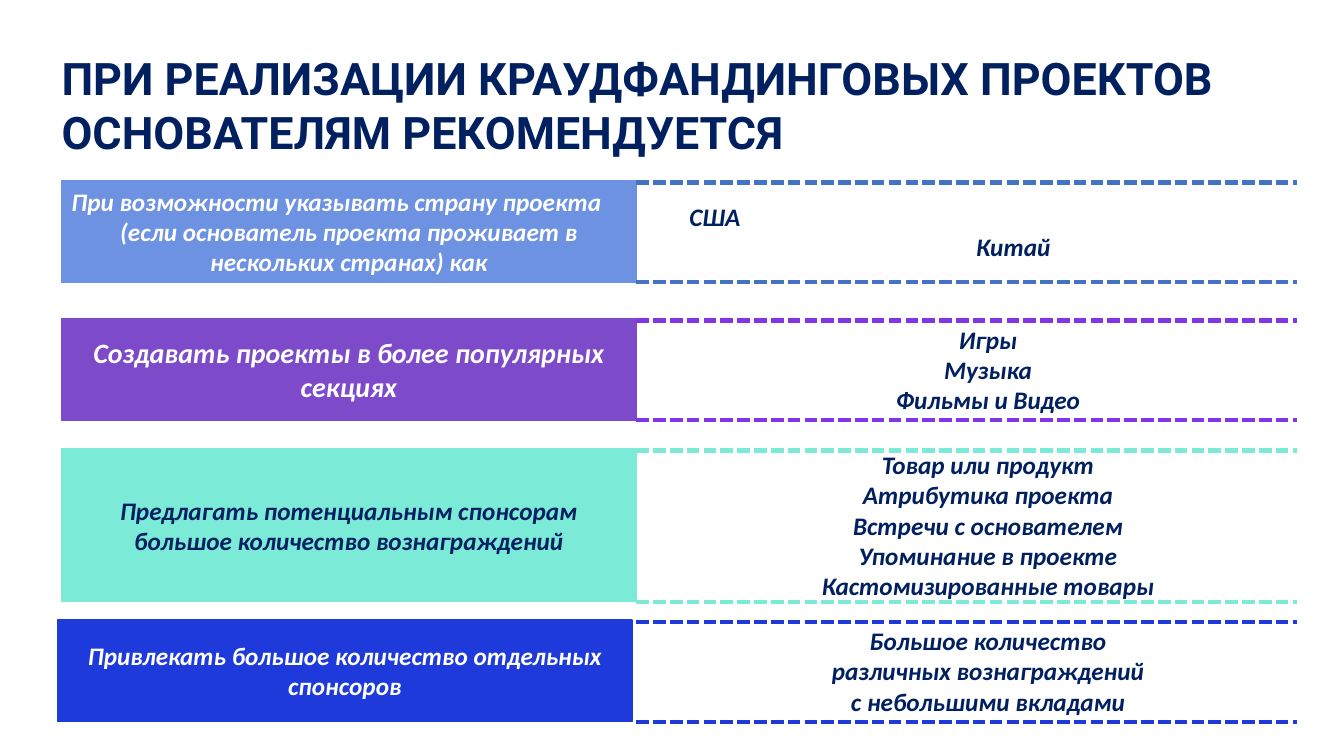
from dataclasses import dataclass

from lxml import etree
from pptx import Presentation
from pptx import util as u
from pptx.dml.color import RGBColor
from pptx.enum import dml, shapes, text
from pptx.oxml.ns import qn

WIDTH, HEIGHT = u.Inches(13.33), u.Inches(7.5)
NAVY, WHITE = "002060", "FFFFFF"
LEFT, CENTER = text.PP_ALIGN.LEFT, text.PP_ALIGN.CENTER

# Grid of 100 columns by 100 rows
ADVICE_LEFT, ADVICE_WIDTH = 4.58, 42.76
ANSWER_LEFT, ANSWER_WIDTH = 50.56, 45.91
DASH_LEFT, DASH_RIGHT = ADVICE_LEFT + ADVICE_WIDTH, ANSWER_LEFT + ANSWER_WIDTH
DASH_OFFSET = 0.27


@dataclass
class Line:
    words: str
    align: text.PP_ALIGN = CENTER
    indent: float = 0


@dataclass
class Row:
    top: float
    height: float
    fill: str
    dash: str
    advice: list[Line]
    answers: list[Line]
    color: str = WHITE
    size: int = 18
    left: float = ADVICE_LEFT


ROWS = [
    Row(23.87, 13.47, "6C92E1", "4472C4",
        [Line("При возможности указывать страну проекта", LEFT),
         Line("(если основатель проекта проживает в нескольких странах) как")],
        [Line("США", LEFT), Line("Китай", indent=3.75)]),
    Row(42.13, 13.47, "7D4BC9", "8335E5",
        [Line("Создавать проекты в более популярных секциях")],
        [Line("Игры"), Line("Музыка"), Line("Фильмы и Видео")], size=20),
    Row(59.33, 20.27, "7BEBD8", "7BEBD8",
        [Line("Предлагать потенциальным спонсорам большое количество вознаграждений")],
        [Line("Товар или продукт"), Line("Атрибутика проекта"),
         Line("Встречи с основателем"), Line("Упоминание в проекте"),
         Line("Кастомизированные товары")], color=NAVY),
    Row(82, 13.47, "1E3ADA", "1E3ADA",
        [Line("Привлекать большое количество отдельных спонсоров")],
        [Line("Большое количество"), Line("различных вознаграждений"),
         Line("с небольшими вкладами")], left=4.28),
]


def column(share: float) -> int:
    return round(WIDTH * share / 100)


def row_at(share: float) -> int:
    return round(HEIGHT * share / 100)


def rgb(value: str) -> RGBColor:
    return RGBColor.from_string(value)


def add_run(paragraph, words: str, font: str, size: int, color: str, italic: bool) -> None:
    run = paragraph.add_run()
    run.text = words
    run.font.name, run.font.size = font, u.Pt(size)
    run.font.bold, run.font.italic = True, italic
    run.font.color.rgb = rgb(color)


def add_title(slide, words: str) -> None:
    box = slide.shapes.add_textbox(column(ADVICE_LEFT), row_at(6.67), column(94.37), row_at(14.4))
    frame = box.text_frame
    frame.word_wrap = True
    frame.margin_left = frame.margin_right = frame.margin_top = frame.margin_bottom = 0
    add_run(frame.paragraphs[0], words, "Roboto", 32, NAVY, False)


def add_panel(slide, row: Row, left: float, width: float, lines: list[Line],
              fill: str, color: str, size: int) -> None:
    shape = slide.shapes.add_shape(shapes.MSO_SHAPE.RECTANGLE, column(left), row_at(row.top),
                                   column(width), row_at(row.height))
    shape.shadow.inherit = False
    shape.fill.solid()
    shape.fill.fore_color.rgb = rgb(fill)
    shape.line.color.rgb = rgb(fill)
    shape.line.width = u.Pt(1)
    frame = shape.text_frame
    frame.word_wrap = True
    frame.vertical_anchor = text.MSO_ANCHOR.MIDDLE
    for index, line in enumerate(lines):
        paragraph = frame.add_paragraph() if index else frame.paragraphs[0]
        paragraph.alignment = line.align
        if line.indent:
            paragraph._p.get_or_add_pPr().set("marL", str(column(line.indent)))
        add_run(paragraph, line.words, "Calibri", size, color, True)


def add_dash(slide, height: float, color: str) -> None:
    y = row_at(height)
    connector = slide.shapes.add_connector(shapes.MSO_CONNECTOR.STRAIGHT,
                                           column(DASH_LEFT), y, column(DASH_RIGHT), y)
    connector.line.color.rgb = rgb(color)
    connector.line.width = u.Pt(3)
    connector.line.dash_style = dml.MSO_LINE.SQUARE_DOT
    etree.SubElement(connector._element.spPr, qn("a:effectLst"))


def main() -> None:
    presentation = Presentation()
    presentation.slide_width, presentation.slide_height = WIDTH, HEIGHT
    slide = presentation.slides.add_slide(presentation.slide_layouts[6])

    add_title(slide, "ПРИ РЕАЛИЗАЦИИ КРАУДФАНДИНГОВЫХ ПРОЕКТОВ ОСНОВАТЕЛЯМ РЕКОМЕНДУЕТСЯ")

    # Advice on the left, answers between dashed rules on the right
    for row in ROWS:
        add_panel(slide, row, row.left, ADVICE_WIDTH, row.advice, row.fill, row.color, row.size)
        add_panel(slide, row, ANSWER_LEFT, ANSWER_WIDTH, row.answers, WHITE, NAVY, 18)
        add_dash(slide, row.top + DASH_OFFSET, row.dash)
        add_dash(slide, row.top + row.height, row.dash)

    presentation.save("out.pptx")


if __name__ == "__main__":
    main()
